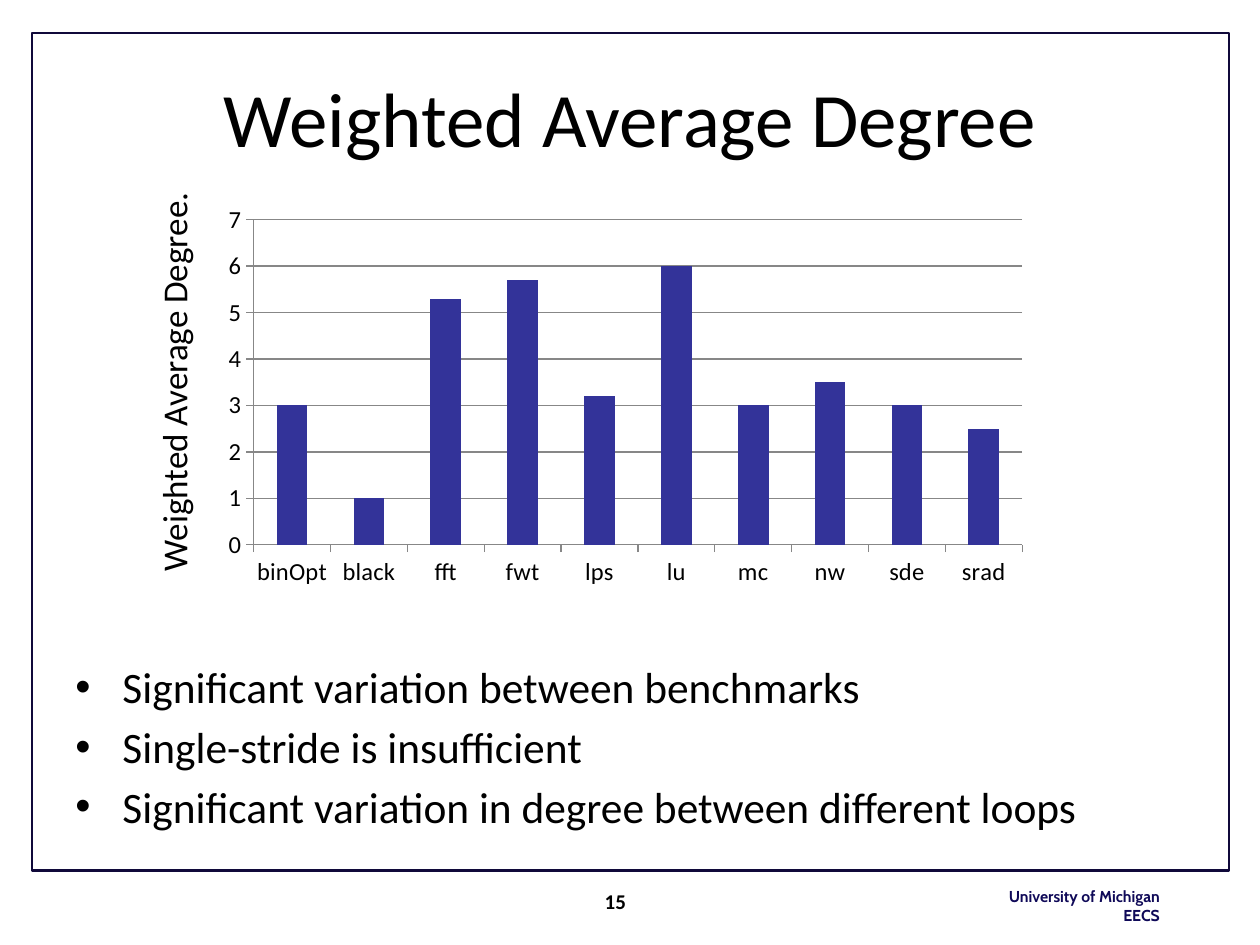
from lxml.etree import SubElement
from pptx import Presentation
from pptx.chart.data import CategoryChartData
from pptx.dml.color import RGBColor
from pptx.enum.chart import XL_CHART_TYPE as ChartType, XL_TICK_MARK as TickMark
from pptx.enum.shapes import MSO_SHAPE as ShapeType
from pptx.enum.text import MSO_ANCHOR as Anchor, PP_ALIGN as Align
from pptx.oxml import parse_xml
from pptx.oxml.ns import nsdecls, qn
from pptx.util import Cm, Pt

BLACK = RGBColor(0x00, 0x00, 0x00)
NAVY = RGBColor(0x0F, 0x09, 0x58)
FRAME = RGBColor(0x10, 0x09, 0x3A)
BAR = RGBColor(0x33, 0x33, 0x99)
GRAY = RGBColor(0x87, 0x87, 0x87)


def set_font(font, size, color=BLACK, name="Calibri", bold=False):
    for attribute, value in {"size": Pt(size), "name": name, "bold": bold}.items():
        setattr(font, attribute, value)
    font.color.rgb = color


def write_text(shape, lines, align, anchor, wrap=True, **font_values):
    frame = shape.text_frame
    frame.word_wrap = wrap
    frame.vertical_anchor = anchor
    frame.text = "\n".join(lines)
    for paragraph in frame.paragraphs:
        paragraph.alignment = align
        set_font(paragraph.runs[0].font, **font_values)
    return frame


presentation = Presentation()
presentation.slide_width = Cm(25.4)
presentation.slide_height = Cm(19.05)
slide = presentation.slides.add_slide(presentation.slide_layouts[5])
shapes = slide.shapes

border = shapes.add_shape(ShapeType.RECTANGLE, Cm(0.64), Cm(0.66), Cm(24.13), Cm(16.89))
border.shadow.inherit = False
border.fill.background()
border.line.color.rgb = FRAME
border.line.width = Pt(1.25)

title = shapes.title
title_place = {"left": Cm(1.27), "top": Cm(0.76), "width": Cm(22.86), "height": Cm(3.18)}
for attribute, value in title_place.items():
    setattr(title, attribute, value)
write_text(title, ["Weighted Average Degree"], Align.CENTER, Anchor.MIDDLE, size=44)

affiliation = shapes.add_textbox(Cm(19.69), Cm(17.75), Cm(3.94), Cm(1.02))
write_text(affiliation, ["University of Michigan", "EECS"], Align.RIGHT, Anchor.TOP,
           wrap=False, size=9, color=NAVY, name="Cabin", bold=True)

findings = [
    "Significant variation between benchmarks",
    "Single-stride is insufficient",
    "Significant variation in degree between different loops",
]
findings_box = shapes.add_textbox(Cm(1.27), Cm(13.18), Cm(21.82), Cm(3.84))
findings_frame = write_text(findings_box, findings, Align.LEFT, Anchor.TOP, size=24.8)
for index, paragraph in enumerate(findings_frame.paragraphs):
    paragraph.space_before = Pt(4.5 if index else 0)
    properties = paragraph._p.get_or_add_pPr()
    properties.set("marL", str(Cm(0.95)))
    properties.set("indent", str(-Cm(0.95)))
    SubElement(properties, qn("a:buFont"), typeface="Arial")
    SubElement(properties, qn("a:buChar"), char="•")

degrees = {
    "binOpt": 3, "black": 1, "fft": 5.3, "fwt": 5.7, "lps": 3.2,
    "lu": 6, "mc": 3, "nw": 3.5, "sde": 3, "srad": 2.5,
}
chart_data = CategoryChartData()
chart_data.categories = list(degrees)
chart_data.add_series("Series 1", list(degrees.values()))
chart = shapes.add_chart(ChartType.COLUMN_CLUSTERED, Cm(3.45), Cm(4.09),
                         Cm(17.17), Cm(8.92), chart_data).chart
chart.has_legend = False
chart.has_title = False
set_font(chart.font, 18)

plot = chart.plots[0]
plot.vary_by_categories = False
plot.gap_width = 150
bars = plot.series[0]
bars.format.fill.solid()
bars.format.fill.fore_color.rgb = BAR

value_axis = chart.value_axis
axis_values = {"minimum_scale": 0, "maximum_scale": 7, "major_unit": 1,
               "has_major_gridlines": True}
for attribute, value in axis_values.items():
    setattr(value_axis, attribute, value)
value_axis.tick_labels.number_format = "General"
value_axis.tick_labels.number_format_is_linked = False
for axis in (chart.category_axis, value_axis):
    axis.major_tick_mark = TickMark.OUTSIDE
    set_font(axis.tick_labels.font, 14)
for line in (chart.category_axis.format.line, value_axis.format.line,
             value_axis.major_gridlines.format.line):
    line.color.rgb = GRAY
    line.width = Pt(0.75)

plot_place = {"x": 0.097, "y": 0.038, "w": 0.903, "h": 0.735}
modes = "".join(f'<c:{key}Mode val="edge"/>' for key in "xy")
sizes = "".join(f'<c:{key} val="{value}"/>' for key, value in plot_place.items())
plot_area = chart._chartSpace.chart.plotArea
for layout in plot_area.findall(qn("c:layout")):
    plot_area.remove(layout)
plot_area.insert(0, parse_xml(
    f'<c:layout {nsdecls("c")}><c:manualLayout><c:layoutTarget val="inner"/>'
    f"{modes}{sizes}</c:manualLayout></c:layout>"))

page_number = shapes.add_textbox(Cm(11.94), Cm(17.65), Cm(12.19), Cm(1.02))
write_text(page_number, ["15"], Align.LEFT, Anchor.MIDDLE, size=12, bold=True)

axis_label = shapes.add_textbox(Cm(-0.94), Cm(6.76), Cm(8.89), Cm(1.12))
axis_label.rotation = 270
write_text(axis_label, ["Weighted Average Degree."], Align.LEFT, Anchor.TOP, size=20)

presentation.save("out.pptx")
